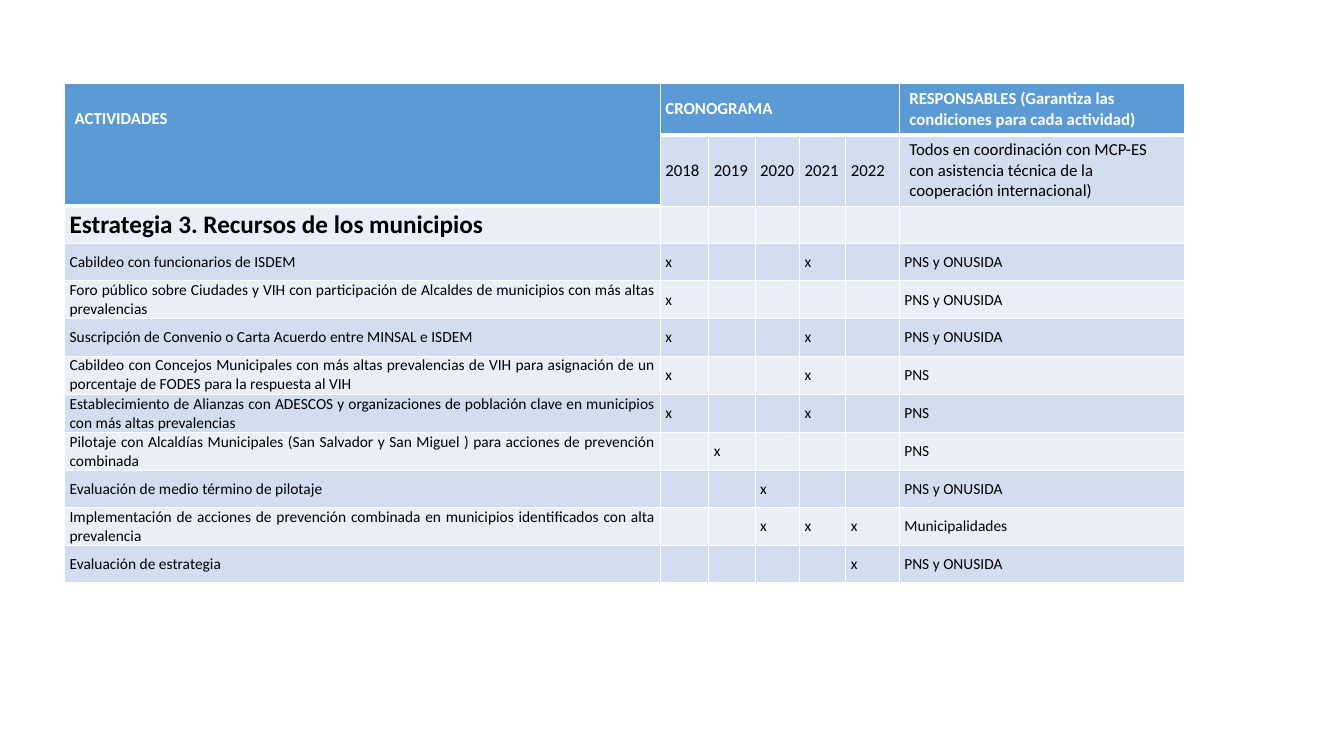
from dataclasses import dataclass

from lxml.etree import SubElement
from pptx import Presentation
from pptx.dml.color import RGBColor
from pptx.enum.text import MSO_ANCHOR as Anchor, PP_ALIGN as Align
from pptx.oxml.ns import qn
from pptx.table import Table, _Cell as Cell
from pptx.util import Inches, Pt


@dataclass(frozen=True)
class Theme:
    """Colours, font and type sizes of the plan."""
    font: str = "Calibri"
    header: str = "5B9BD5"
    dark_band: str = "D2DEEF"
    light_band: str = "EAEFF7"
    rule: str = "FFFFFF"
    header_text: str = "FFFFFF"
    body_text: str = "000000"
    heading_size: float = 12
    strategy_size: float = 18
    activity_size: float = 11
    thin: float = 1
    thick: float = 3


@dataclass(frozen=True)
class Activity:
    """An activity, the years it runs in and who answers for it."""
    title: str
    years: tuple[int, ...]
    responsible: str


@dataclass(frozen=True)
class Padding:
    """Cell insets in inches."""
    side: float
    top: float
    bottom: float


THEME = Theme()
TIGHT = Padding(0.05, 0, 0)
ROOMY = Padding(0.1, 0.05, 0.05)
LOWERED = Padding(0.1, 0.25, 0.05)
YEARS = range(2018, 2023)
RESPONSIBLE_COLUMN = len(YEARS) + 1
COLUMN_WIDTHS = (5.91, 0.48, 0.46, 0.44, 0.46, 0.53, 2.83)
HEADER_HEIGHTS = (0.5, 0.7)
ROW_HEIGHT = 0.37
STRATEGY_ROW = 2
BOTH = "PNS y ONUSIDA"
ACTIVITIES = (
    Activity("Cabildeo con funcionarios de ISDEM", (2018, 2021), BOTH),
    Activity("Foro público sobre Ciudades y VIH con participación de Alcaldes de "
             "municipios con más altas prevalencias", (2018,), BOTH),
    Activity("Suscripción de Convenio o Carta Acuerdo entre MINSAL e ISDEM",
             (2018, 2021), BOTH),
    Activity("Cabildeo con Concejos Municipales con más altas prevalencias de VIH para "
             "asignación de un porcentaje de FODES para la respuesta al VIH",
             (2018, 2021), "PNS"),
    Activity("Establecimiento de Alianzas con ADESCOS y organizaciones de población "
             "clave en municipios con más altas prevalencias", (2018, 2021), "PNS"),
    Activity("Pilotaje con Alcaldías Municipales (San Salvador y San Miguel ) para "
             "acciones de prevención combinada", (2019,), "PNS"),
    Activity("Evaluación de medio término de pilotaje", (2020,), BOTH),
    Activity("Implementación de acciones de prevención combinada en municipios "
             "identificados con alta prevalencia", (2020, 2021, 2022), "Municipalidades"),
    Activity("Evaluación de estrategia", (2022,), BOTH),
)


def is_header(row: int, column: int) -> bool:
    """Tell whether a cell belongs to the blue heading."""
    return row == 0 or (row == 1 and column == 0)


def draw_borders(cell: Cell, top: float, bottom: float) -> None:
    """Rule the four edges of a cell."""
    properties = cell._tc.get_or_add_tcPr()
    widths = {"lnL": THEME.thin, "lnR": THEME.thin, "lnT": top, "lnB": bottom}
    for edge, width in widths.items():
        line = SubElement(properties, qn(f"a:{edge}"), w=str(Pt(width)))
        SubElement(SubElement(line, qn("a:solidFill")), qn("a:srgbClr"), val=THEME.rule)


def paint_cell(cell: Cell, row: int, column: int) -> None:
    """Give a cell its rules, fill and tight insets."""
    header = is_header(row, column)
    below_header = row > 0 and not header and is_header(row - 1, column)
    draw_borders(cell, THEME.thick if below_header else THEME.thin,
                 THEME.thick if header else THEME.thin)
    band = THEME.dark_band if row % 2 else THEME.light_band
    cell.fill.solid()
    cell.fill.fore_color.rgb = RGBColor.from_string(THEME.header if header else band)
    pad_cell(cell, TIGHT, Anchor.MIDDLE)


def pad_cell(cell: Cell, padding: Padding, anchor: Anchor) -> None:
    """Set the insets and the anchor of a cell."""
    layout = {
        "margin_left": Inches(padding.side), "margin_right": Inches(padding.side),
        "margin_top": Inches(padding.top), "margin_bottom": Inches(padding.bottom),
        "vertical_anchor": anchor,
    }
    for name, value in layout.items():
        setattr(cell, name, value)


def write_cell(cell: Cell, text: str, size: float, bold: bool = False,
               color: str = THEME.body_text, align: Align = Align.JUSTIFY) -> None:
    """Write one formatted paragraph into a cell."""
    paragraph = cell.text_frame.paragraphs[0]
    paragraph.alignment = align
    run = paragraph.add_run()
    run.text = text
    for name, value in {"name": THEME.font, "size": Pt(size), "bold": bold}.items():
        setattr(run.font, name, value)
    run.font.color.rgb = RGBColor.from_string(color)


def write_headings(plan: Table) -> None:
    """Fill the two heading rows and the strategy row."""
    plan.cell(0, 0).merge(plan.cell(1, 0))
    plan.cell(0, 1).merge(plan.cell(0, len(YEARS)))
    headings = {
        0: "ACTIVIDADES",
        1: "CRONOGRAMA",
        RESPONSIBLE_COLUMN: "RESPONSABLES (Garantiza las condiciones para cada actividad)",
    }
    for column, heading in headings.items():
        write_cell(plan.cell(0, column), heading, THEME.heading_size, True,
                   THEME.header_text, Align.LEFT)
    for column, year in enumerate(YEARS, 1):
        write_cell(plan.cell(1, column), str(year), THEME.heading_size)
    coordination = plan.cell(1, RESPONSIBLE_COLUMN)
    write_cell(coordination, "Todos en coordinación con MCP-ES con asistencia técnica "
               "de la cooperación internacional)", THEME.heading_size, align=Align.LEFT)
    pad_cell(plan.cell(0, 0), LOWERED, Anchor.TOP)
    pad_cell(plan.cell(0, RESPONSIBLE_COLUMN), ROOMY, Anchor.TOP)
    pad_cell(coordination, ROOMY, Anchor.TOP)
    write_cell(plan.cell(STRATEGY_ROW, 0), "Estrategia 3. Recursos de los municipios",
               THEME.strategy_size, True)


def write_activity(plan: Table, row: int, activity: Activity) -> None:
    """Fill one row with an activity and its year marks."""
    marks = ["x" if year in activity.years else "" for year in YEARS]
    for column, text in enumerate([activity.title, *marks, activity.responsible]):
        if text:
            write_cell(plan.cell(row, column), text, THEME.activity_size)


def main() -> None:
    """Build the activity plan and save it."""
    deck = Presentation()
    deck.slide_width, deck.slide_height = Inches(13.33), Inches(7.5)
    slide = deck.slides.add_slide(deck.slide_layouts[6])
    heights = HEADER_HEIGHTS + (ROW_HEIGHT,) * (1 + len(ACTIVITIES))
    plan = slide.shapes.add_table(
        len(heights), len(COLUMN_WIDTHS), Inches(0.64), Inches(0.83),
        Inches(sum(COLUMN_WIDTHS)), Inches(sum(heights))).table
    plan.first_row = plan.horz_banding = False
    for column, width in zip(plan.columns, COLUMN_WIDTHS):
        column.width = Inches(width)
    for row, height in enumerate(heights):
        plan.rows[row].height = Inches(height)
        for column in range(len(COLUMN_WIDTHS)):
            paint_cell(plan.cell(row, column), row, column)
    write_headings(plan)
    for row, activity in enumerate(ACTIVITIES, STRATEGY_ROW + 1):
        write_activity(plan, row, activity)
    deck.save("out.pptx")


if __name__ == "__main__":
    main()
